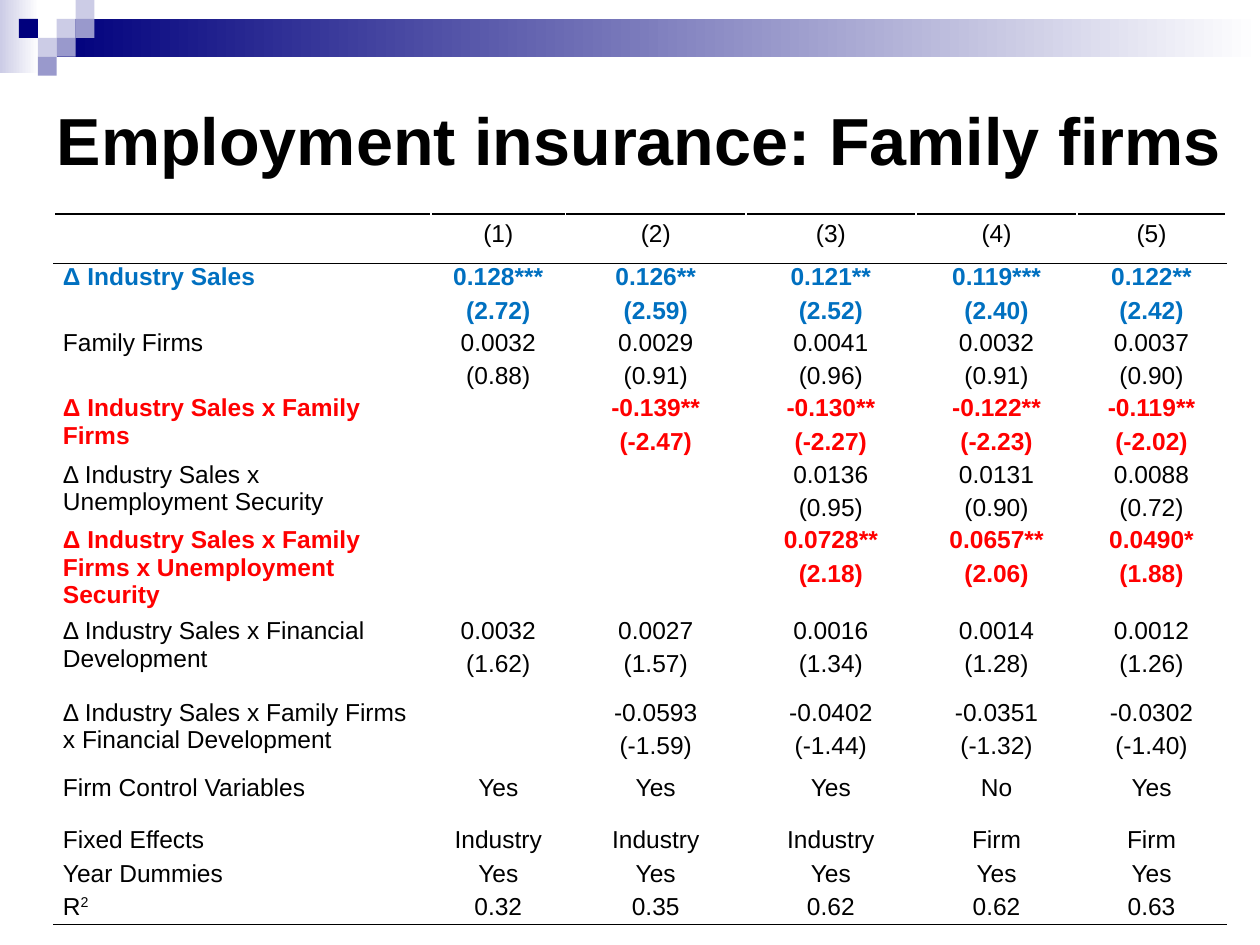
"""Build a slide with a regression table on employment insurance in family firms."""
from lxml.etree import SubElement
from pptx import Presentation
from pptx.dml.color import RGBColor
from pptx.enum.shapes import MSO_SHAPE as SHAPE
from pptx.enum.text import MSO_ANCHOR as ANCHOR, MSO_AUTO_SIZE as AUTO, PP_ALIGN as ALIGN
from pptx.oxml.ns import qn
from pptx.util import Inches, Pt

COLORS = {"black": "000000", "white": "FFFFFF", "blue": "0070C0", "red": "FF0000",
          "navy": "00007D", "lilac": "CCCCE6", "violet": "9999CC"}
FONT = "Arial"
TITLE = "Employment insurance: Family firms"

BANDS = [((0, 0, 0.31, 0.58), "lilac"), ((0.45, 0.15, 9.55, 0.3), "navy")]
UNIT = 0.15
SQUARES = [(3, 1, "lilac"), (4, 0, "lilac"), (4, 1, "violet"), (2, 2, "lilac"),
           (1, 1, "navy"), (3, 2, "violet"), (2, 3, "violet")]

COLUMNS = [2.99, 1.07, 1.43, 1.35, 1.28, 1.18]
ROWS = [
    (0.39, "black", "", ["(1)", "(2)", "(3)", "(4)", "(5)"]),
    (0.52, "blue", "Δ Industry Sales",
     ["0.128*** (2.72)", "0.126** (2.59)", "0.121** (2.52)", "0.119*** (2.40)", "0.122** (2.42)"]),
    (0.52, "black", "Family Firms",
     ["0.0032 (0.88)", "0.0029 (0.91)", "0.0041 (0.96)", "0.0032 (0.91)", "0.0037 (0.90)"]),
    (0.53, "red", "Δ Industry Sales x Family Firms",
     ["", "-0.139** (-2.47)", "-0.130** (-2.27)", "-0.122** (-2.23)", "-0.119** (-2.02)"]),
    (0.52, "black", "Δ Industry Sales x Unemployment Security",
     ["", "", "0.0136 (0.95)", "0.0131 (0.90)", "0.0088 (0.72)"]),
    (0.72, "red", "Δ Industry Sales x Family Firms x Unemployment Security",
     ["", "", "0.0728** (2.18)", "0.0657** (2.06)", "0.0490* (1.88)"]),
    (0.65, "black", "Δ Industry Sales x Financial Development",
     ["0.0032 (1.62)", "0.0027 (1.57)", "0.0016 (1.34)", "0.0014 (1.28)", "0.0012 (1.26)"]),
    (0.6, "black", "Δ Industry Sales x Family Firms x Financial Development",
     ["", "-0.0593 (-1.59)", "-0.0402 (-1.44)", "-0.0351 (-1.32)", "-0.0302 (-1.40)"]),
    (0.41, "black", "Firm Control Variables", ["Yes", "Yes", "Yes", "No", "Yes"]),
    (0.27, "black", "Fixed Effects", ["Industry", "Industry", "Industry", "Firm", "Firm"]),
    (0.26, "black", "Year Dummies", ["Yes"] * 5),
    (0.25, "black", "R^2", ["0.32", "0.35", "0.62", "0.62", "0.63"]),
]
LAST = len(ROWS) - 1
RULES = {0: ("lnT", "lnB"), 1: ("lnT",), LAST: ("lnB",)}


def rgb(name):
    return RGBColor.from_string(COLORS[name])


def add_block(s, box, color, fade=False):
    sp = s.shapes.add_shape(SHAPE.RECTANGLE, *map(Inches, box))
    sp.shadow.inherit = False
    sp.line.fill.background()
    if fade:
        sp.fill.gradient()
        sp.fill.gradient_angle = 0
        for stop, name in zip(sp.fill.gradient_stops, (color, "white")):
            stop.color.rgb = rgb(name)
    else:
        sp.fill.solid()
        sp.fill.fore_color.rgb = rgb(color)


def style(p, size, color, bold):
    p.font.name, p.font.size, p.font.bold = FONT, Pt(size), bold
    p.font.color.rgb = rgb(color)


def add_rule(cell, side):
    ln = SubElement(cell._tc.get_or_add_tcPr(), qn(f"a:{side}"), w=str(Pt(1)))
    fill = SubElement(ln, qn("a:solidFill"))
    SubElement(fill, qn("a:srgbClr"), val=COLORS["black"])


def fill_cell(cell, lines, row, col, color):
    side, top = (0.1, 0.05) if row == 0 else (0.07, 0)
    cell.margin_left = cell.margin_right = Inches(side)
    cell.margin_top = cell.margin_bottom = Inches(top)
    for i, line in enumerate(lines):
        p = cell.text_frame.paragraphs[0] if i == 0 else cell.text_frame.add_paragraph()
        p.alignment = ALIGN.CENTER if col else ALIGN.LEFT
        p.space_before = Pt(3.4 if col else 3.9)
        style(p, 14, color, color != "black")
        base, _, power = line.partition("^")
        if base:
            p.add_run().text = base
        if power:
            r = p.add_run()
            r.text = power
            r.font._element.set("baseline", "30000")
    for rule in RULES.get(row, ()):
        add_rule(cell, rule)
    cell.fill.background()


def add_results(s):
    heights = [row[0] for row in ROWS]
    box = (0.43, 1.7, sum(COLUMNS), sum(heights))
    table = s.shapes.add_table(len(ROWS), len(COLUMNS), *map(Inches, box)).table
    table.first_row = table.horz_banding = False
    for column, width in zip(table.columns, COLUMNS):
        column.width = Inches(width)
    for i, (height, color, label, values) in enumerate(ROWS):
        table.rows[i].height = Inches(height)
        fill_cell(table.cell(i, 0), [label], i, 0, color)
        for j, value in enumerate(values, 1):
            fill_cell(table.cell(i, j), value.split(), i, j, color)


def main():
    prs = Presentation()
    prs.slide_width, prs.slide_height = Inches(10), Inches(7.5)
    s = prs.slides.add_slide(prs.slide_layouts[5])
    for box, color in BANDS:
        add_block(s, box, color, fade=True)
    for col, row, color in SQUARES:
        add_block(s, (col * UNIT, row * UNIT, UNIT, UNIT), color)

    title = s.shapes.title
    title.left, title.top, title.width, title.height = map(Inches, (0.35, 0.5, 9.45, 1.2))
    tf = title.text_frame
    tf.text = TITLE
    tf.auto_size, tf.vertical_anchor = AUTO.NONE, ANCHOR.MIDDLE
    tf.paragraphs[0].alignment = ALIGN.LEFT
    style(tf.paragraphs[0], 38, "black", True)

    add_results(s)
    prs.save("out.pptx")


if __name__ == "__main__":
    main()
